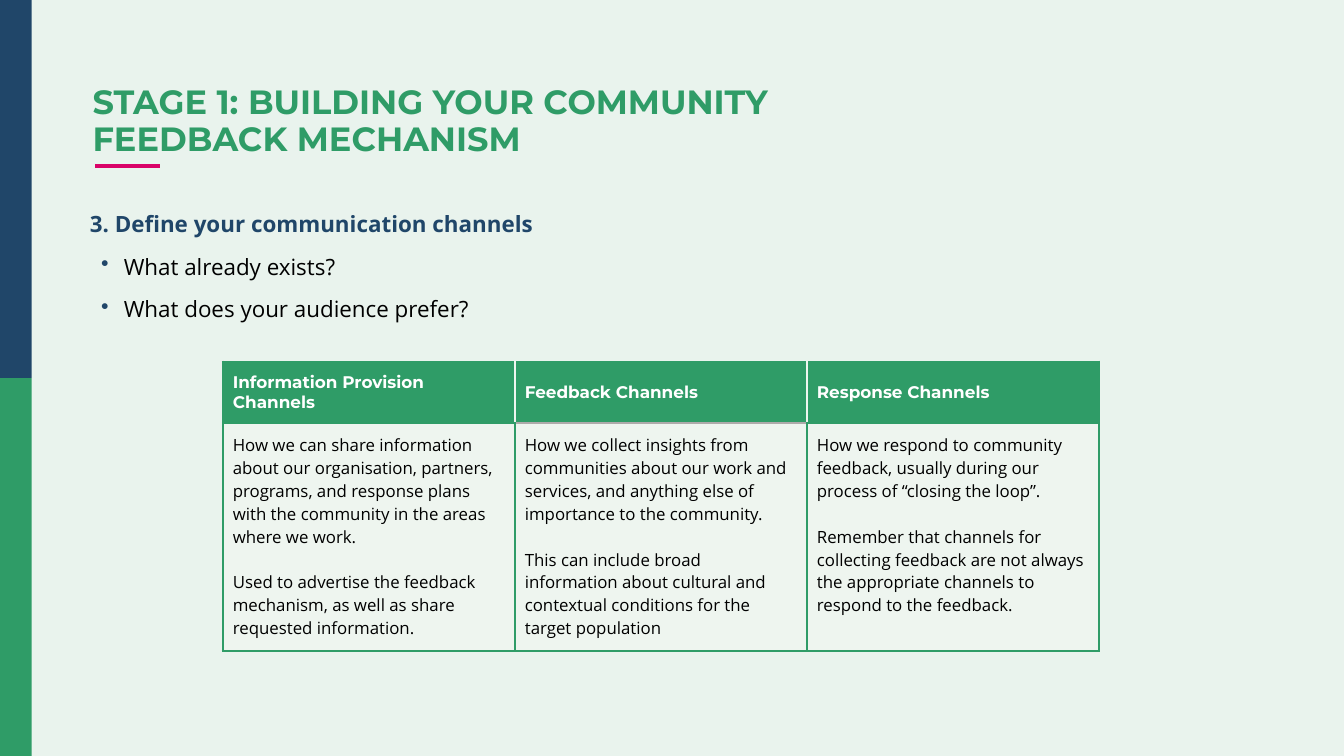
import lxml.etree
import pptx
import pptx.dml.color
import pptx.enum.shapes
import pptx.enum.text
import pptx.oxml.ns
import pptx.util
from pptx.util import Cm, Pt

TITLE = "STAGE 1: BUILDING YOUR COMMUNITY\vFEEDBACK MECHANISM"
HEADING = "3. Define your communication channels"
QUESTIONS = ["What already exists?", "What does your audience prefer?"]
CHANNELS = [
    ("Information Provision Channels", [
        "How we can share information about our organisation, partners, programs, "
        "and response plans with the community in the areas where we work.",
        "Used to advertise the feedback mechanism, as well as share requested information.",
    ]),
    ("Feedback Channels", [
        "How we collect insights from communities about our work and services, "
        "and anything else of importance to the community.",
        "This can include broad information about cultural and contextual conditions "
        "for the target population",
    ]),
    ("Response Channels", [
        "How we respond to community feedback, usually during our process of "
        "“closing the loop”.",
        "Remember that channels for collecting feedback are not always the appropriate "
        "channels to respond to the feedback.",
    ]),
]

THEME = {
    "background": "E9F3ED", "green": "2F9C67", "navy": "204669", "pink": "D90368",
    "pale": "EEF5EF", "grey": "AEAAAA", "white": "FFFFFF", "black": "000000",
    "title_font": "Montserrat", "body_font": "Open Sans",
    "title_size": 18, "body_size": 12, "table_size": 9,
}

SLIDE_WIDTH, SLIDE_HEIGHT = Cm(25.4), Cm(14.29)
BAND_WIDTH = Cm(0.6)
TABLE_LEFT, TABLE_TOP, COLUMN_WIDTH = Cm(4.21), Cm(6.83), Cm(5.52)
ROW_HEIGHTS = [Cm(1.17), Cm(4.3)]


def color(name):
    return pptx.dml.color.RGBColor.from_string(THEME[name])


def add_bullet(paragraph, bullet_color):
    properties = paragraph._p.get_or_add_pPr()
    properties.set("marL", str(Cm(0.64)))
    properties.set("indent", str(-Cm(0.43)))
    container = lxml.etree.SubElement(properties, pptx.oxml.ns.qn("a:buClr"))
    lxml.etree.SubElement(container, pptx.oxml.ns.qn("a:srgbClr"), val=THEME[bullet_color])
    lxml.etree.SubElement(properties, pptx.oxml.ns.qn("a:buChar"), char="•")


def write(frame, text, font="body_font", size="body_size", fill="black", bold=False,
          line_spacing=None, space_before=None, bullet=None):
    """Add a paragraph, filling the empty first one before adding more."""
    is_first = not frame.text
    paragraph = frame.paragraphs[0] if is_first else frame.add_paragraph()
    if line_spacing:
        paragraph.line_spacing = line_spacing
    if space_before and not is_first:
        paragraph.space_before = space_before
    if bullet:
        add_bullet(paragraph, bullet)
    paragraph.text = text
    paragraph.font.name = THEME[font]
    paragraph.font.size = Pt(THEME[size])
    paragraph.font.bold = bold
    paragraph.font.color.rgb = color(fill)


def add_text_box(slide, left, top, width, height):
    frame = slide.shapes.add_textbox(left, top, width, height).text_frame
    frame.word_wrap = True
    return frame


def add_side_bands(slide):
    height = SLIDE_HEIGHT // 2
    for index, name in enumerate(["navy", "green"]):
        band = slide.shapes.add_shape(pptx.enum.shapes.MSO_SHAPE.RECTANGLE,
                                      0, index * height, BAND_WIDTH, height)
        band.shadow.inherit = False
        band.fill.solid()
        band.fill.fore_color.rgb = color(name)
        band.line.fill.background()


def add_title(slide):
    rule = slide.shapes.add_connector(pptx.enum.shapes.MSO_CONNECTOR.STRAIGHT,
                                      Cm(1.8), Cm(3.14), Cm(3.03), Cm(3.14))
    rule.line.color.rgb = color("pink")
    rule.line.width = Pt(2.25)
    lxml.etree.SubElement(rule._element.spPr, pptx.oxml.ns.qn("a:effectLst"))
    frame = add_text_box(slide, Cm(1.75), Cm(1.5), Cm(21.9), Cm(2.34))
    frame.margin_left = 0
    write(frame, TITLE, font="title_font", size="title_size", fill="green",
          bold=True, line_spacing=0.9)


def add_questions(slide):
    frame = add_text_box(slide, Cm(1.45), Cm(3.81), Cm(15.72), Cm(2.97))
    spacing = {"line_spacing": Pt(15.4), "space_before": Pt(7.5)}
    write(frame, HEADING, fill="navy", bold=True, **spacing)
    for question in QUESTIONS:
        write(frame, question, bullet="navy", **spacing)


def add_border(cell, side, name):
    border = lxml.etree.SubElement(cell._tc.get_or_add_tcPr(),
                                   pptx.oxml.ns.qn(f"a:ln{side}"), w=str(Pt(1)))
    fill = lxml.etree.SubElement(border, pptx.oxml.ns.qn("a:solidFill"))
    lxml.etree.SubElement(fill, pptx.oxml.ns.qn("a:srgbClr"), val=THEME[name])


def format_cell(cell, row, column):
    cell.margin_left = cell.margin_right = Cm(0.19)
    cell.margin_top = cell.margin_bottom = Cm(0.2)
    is_header = row == 0
    last = len(CHANNELS) - 1
    divider = "grey" if 0 < column < last else "green"
    borders = {
        "L": "pale" if is_header and column > 0 else "green",
        "R": "pale" if is_header and column < last else "green",
        "T": "green" if is_header else divider,
        "B": divider if is_header else "green",
    }
    for side, name in borders.items():
        add_border(cell, side, name)
    cell.fill.solid()
    cell.fill.fore_color.rgb = color("green" if is_header else "pale")


def add_channel_table(slide):
    table = slide.shapes.add_table(len(ROW_HEIGHTS), len(CHANNELS), TABLE_LEFT, TABLE_TOP,
                                   COLUMN_WIDTH * len(CHANNELS), sum(ROW_HEIGHTS)).table
    for row, height in zip(table.rows, ROW_HEIGHTS):
        row.height = height
    for column, (heading, descriptions) in enumerate(CHANNELS):
        table.columns[column].width = COLUMN_WIDTH
        header, body = table.cell(0, column), table.cell(1, column)
        format_cell(header, 0, column)
        format_cell(body, 1, column)
        header.vertical_anchor = pptx.enum.text.MSO_ANCHOR.MIDDLE
        write(header.text_frame, heading, font="title_font", size="table_size",
              fill="white", bold=True)
        for description in descriptions:
            write(body.text_frame, description, size="table_size", space_before=Pt(12.25))


def main():
    presentation = pptx.Presentation()
    presentation.slide_width, presentation.slide_height = SLIDE_WIDTH, SLIDE_HEIGHT
    slide = presentation.slides.add_slide(presentation.slide_layouts[6])
    slide.background.fill.solid()
    slide.background.fill.fore_color.rgb = color("background")
    add_side_bands(slide)
    add_title(slide)
    add_questions(slide)
    add_channel_table(slide)
    presentation.save("out.pptx")


if __name__ == "__main__":
    main()
